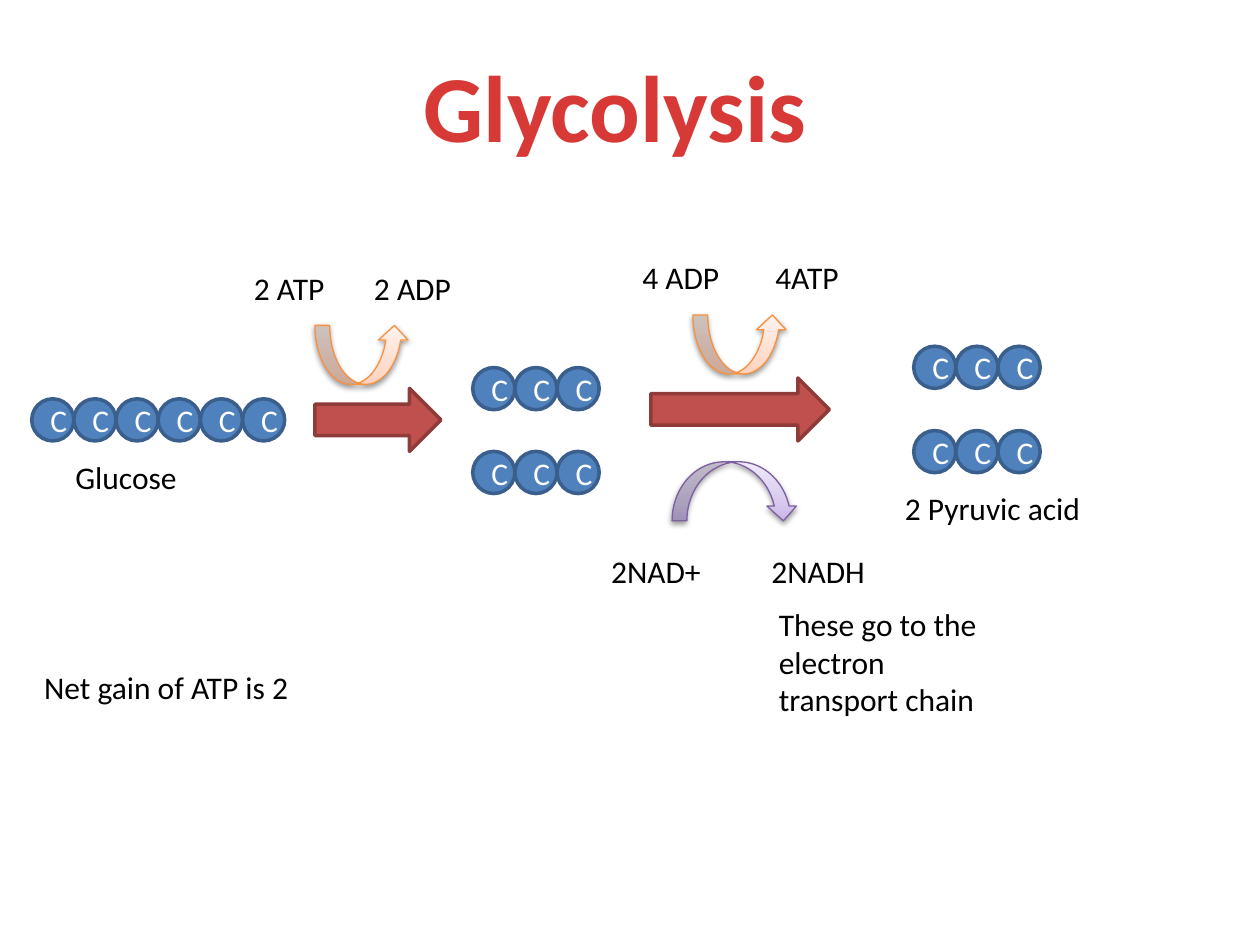
from dataclasses import dataclass

from lxml import etree
from pptx import Presentation
from pptx.dml.color import RGBColor
from pptx.enum.shapes import MSO_SHAPE as SHAPE
from pptx.enum.text import MSO_ANCHOR as ANCHOR, PP_ALIGN as ALIGN
from pptx.oxml import parse_xml
from pptx.oxml.ns import nsdecls, qn
from pptx.util import Cm, Pt


@dataclass(frozen=True)
class Theme:
    font: str = "Calibri"
    title_size: int = 54
    body_size: int = 18
    title: str = "D73A36"
    text: str = "000000"
    light: str = "FFFFFF"
    carbon: tuple = ("4F81BD", "3A5F8C")
    arrow: tuple = ("C0504D", "8E3B39")
    orange: tuple = ("F69240", "FFD2BD", "FFDED0", "FFF2ED")
    purple: tuple = ("7D60A0", "C9B5E8", "D8CBEE", "F0EAF9")


THEME = Theme()
CARBON_SIZE = 0.85


def rgb(color):
    return RGBColor.from_string(color)


def format_runs(p, size, color, bold=False):
    for r in p.runs:
        r.font.name = THEME.font
        r.font.size = Pt(size)
        r.font.bold = bold
        r.font.color.rgb = rgb(color)


def add_preset(slide, kind, x, y, w, h, line, line_width):
    s = slide.shapes.add_shape(kind, Cm(x), Cm(y), Cm(w), Cm(h))
    s.shadow.inherit = False
    s.line.color.rgb = rgb(line)
    s.line.width = Pt(line_width)
    return s


def add_solid(slide, kind, x, y, w, h, colors):
    fill, line = colors
    s = add_preset(slide, kind, x, y, w, h, line, 2)
    s.fill.solid()
    s.fill.fore_color.rgb = rgb(fill)
    return s


def add_carbon_chain(slide, x, y, count):
    for i in range(count):
        s = add_solid(slide, SHAPE.OVAL, x + i * CARBON_SIZE, y,
                      CARBON_SIZE, CARBON_SIZE, THEME.carbon)
        tf = s.text_frame
        tf.text = "C"
        tf.vertical_anchor = ANCHOR.MIDDLE
        p = tf.paragraphs[0]
        p.alignment = ALIGN.CENTER
        format_runs(p, THEME.body_size, THEME.light)


def add_curved_arrow(slide, kind, x, y, w, colors):
    """Add a curved arrow with a vertical gradient and a soft shadow."""
    line, *stops = colors
    s = add_preset(slide, kind, x, y, w, 1.19, line, 0.75)
    s.fill.background()
    sp_pr = s._element.spPr
    stop_xml = "".join(
        f'<a:gs pos="{pos}"><a:srgbClr val="{color}"/></a:gs>'
        for pos, color in zip((0, 35000, 100000), stops))
    sp_pr.replace(sp_pr.find(qn("a:noFill")), parse_xml(
        f'<a:gradFill {nsdecls("a")} rotWithShape="1"><a:gsLst>{stop_xml}</a:gsLst>'
        '<a:lin ang="16200000" scaled="1"/></a:gradFill>'))
    sp_pr.find(qn("a:effectLst")).append(parse_xml(
        f'<a:outerShdw {nsdecls("a")} blurRad="40000" dist="20000" dir="5400000" '
        'rotWithShape="0"><a:srgbClr val="000000"><a:alpha val="38000"/>'
        '</a:srgbClr></a:outerShdw>'))


def add_label(slide, text, x, y, w, h=1.03, tab=None):
    """Add a text box; tab is the distance to the second column, if any."""
    tf = slide.shapes.add_textbox(Cm(x), Cm(y), Cm(w), Cm(h)).text_frame
    tf.word_wrap = True
    tf.text = text
    p = tf.paragraphs[0]
    format_runs(p, THEME.body_size, THEME.text)
    if tab:
        tabs = etree.SubElement(p._p.get_or_add_pPr(), qn("a:tabLst"))
        etree.SubElement(tabs, qn("a:tab"), pos=str(Cm(tab)), algn="l")


def add_title(slide, text):
    s = slide.shapes.title
    s.left, s.top, s.width, s.height = Cm(8.25), Cm(0.85), Cm(8.3), Cm(2.56)
    tf = s.text_frame
    tf.text = text
    tf.word_wrap = False
    tf.vertical_anchor = ANCHOR.TOP
    p = tf.paragraphs[0]
    p.alignment = ALIGN.CENTER
    format_runs(p, THEME.title_size, THEME.title, bold=True)


def main():
    prs = Presentation()
    prs.slide_width, prs.slide_height = Cm(25.4), Cm(19.05)
    slide = prs.slides.add_slide(prs.slide_layouts[5])
    add_title(slide, "Glycolysis")

    for x, y, count in ((0.64, 8.04, 6),
                        (9.53, 7.41, 3), (9.53, 9.1, 3),
                        (18.42, 6.98, 3), (18.42, 8.68, 3)):
        add_carbon_chain(slide, x, y, count)

    for x, y, w in ((6.35, 7.83, 2.54), (13.12, 7.62, 3.6)):
        add_solid(slide, SHAPE.RIGHT_ARROW, x, y, w, 1.27, THEME.arrow)

    for kind, x, y, w, colors in (
            (SHAPE.CURVED_UP_ARROW, 6.35, 6.56, 1.9, THEME.orange),
            (SHAPE.CURVED_UP_ARROW, 13.97, 6.35, 1.9, THEME.orange),
            (SHAPE.CURVED_DOWN_ARROW, 13.55, 9.31, 2.54, THEME.purple)):
        add_curved_arrow(slide, kind, x, y, w, colors)

    add_label(slide, "2 ATP\t2 ADP", 4.87, 5.29, 5.08, tab=2.42)
    add_label(slide, "4 ADP\t4ATP", 12.7, 5.08, 5.08, tab=2.68)
    add_label(slide, "2NAD+\t2NADH", 12.07, 11.01, 5.72, tab=3.23)
    add_label(slide, "These go to the electron transport chain", 15.45, 12.07, 5.08, 2.56)
    add_label(slide, "2 Pyruvic acid", 17.99, 9.74, 4.87)
    add_label(slide, "Glucose", 1.27, 9.1, 4.45)
    add_label(slide, "Net gain of ATP is 2", 0.64, 13.34, 7.83)

    prs.save("out.pptx")


if __name__ == "__main__":
    main()
